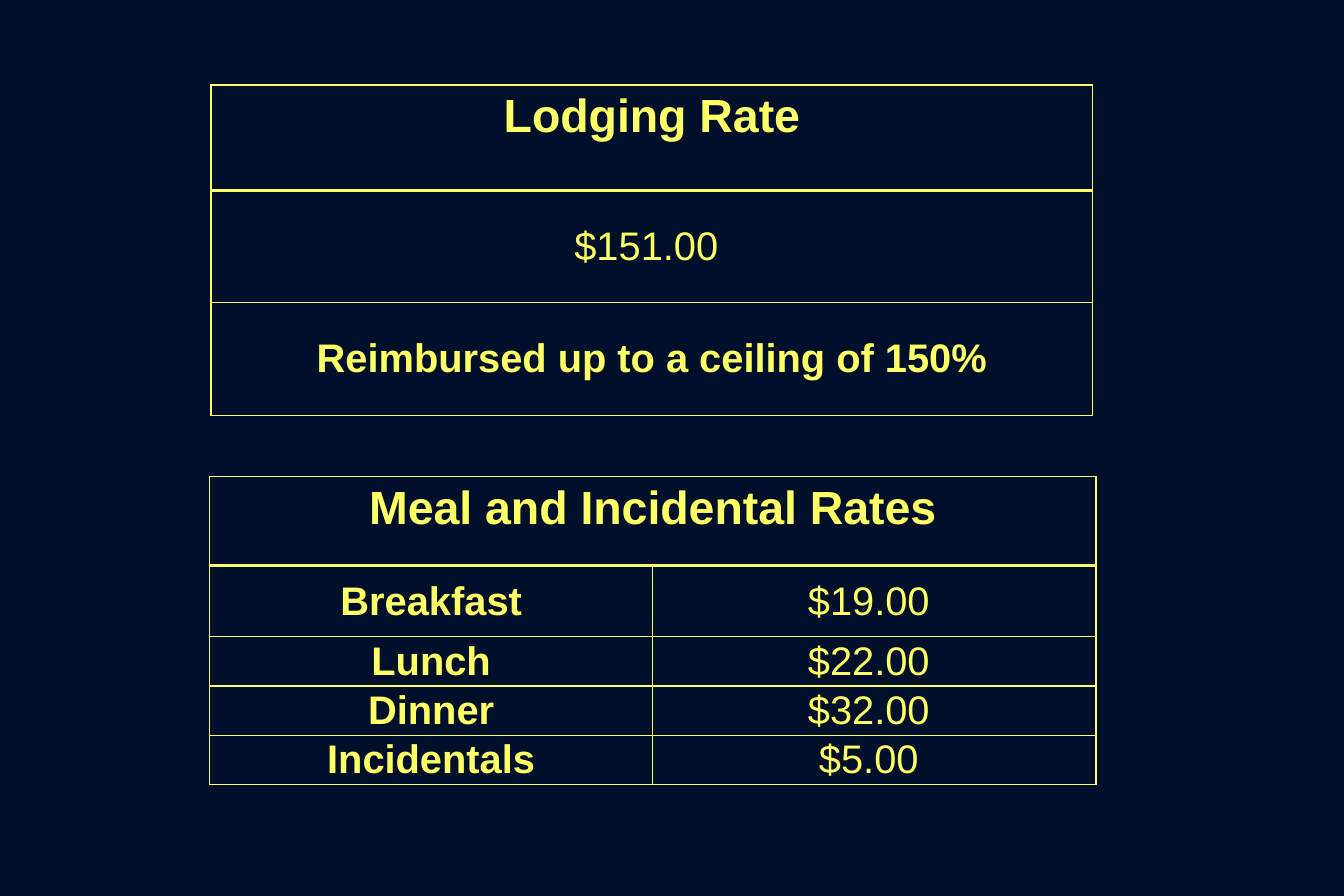
from lxml import etree
from pptx import Presentation
from pptx.dml.color import RGBColor
from pptx.enum.text import MSO_ANCHOR, PP_ALIGN
from pptx.oxml.ns import qn
from pptx.util import Pt

CENTER = PP_ALIGN.CENTER
TOP, MIDDLE = MSO_ANCHOR.TOP, MSO_ANCHOR.MIDDLE
NAVY, YELLOW = "000F2A", "FFFF66"

# Text formats
HEADING = {"size": Pt(28), "bold": True}
LABEL = {"size": Pt(24), "bold": True}
AMOUNT = {"size": Pt(24), "bold": False}

# Cell formats
HEADING_CELL = {"vertical_anchor": TOP}
BODY_CELL = {"vertical_anchor": MIDDLE, "margin_left": Pt(5), "margin_right": Pt(5),
             "margin_top": 0, "margin_bottom": 0}

MEALS = [("Breakfast", "$19.00 "), ("Lunch", "$22.00 "),
         ("Dinner", "$32.00 "), ("Incidentals", "$5.00 ")]


def rgb(value):
    return RGBColor.from_string(value)


def apply(target, values):
    for name, value in values.items():
        setattr(target, name, value)


def add_text(cell, text, style):
    p = cell.text_frame.paragraphs[0]
    p.alignment = CENTER
    r = p.add_run()
    r.text = text
    apply(r.font, {"name": "Arial", **style})
    r.font.color.rgb = rgb(YELLOW)


def add_borders(cell, color=YELLOW, width=Pt(1)):
    tc_pr = cell._tc.get_or_add_tcPr()
    for side in ("lnL", "lnR", "lnT", "lnB"):
        ln = etree.SubElement(tc_pr, qn(f"a:{side}"), w=str(int(width)))
        fill = etree.SubElement(ln, qn("a:solidFill"))
        etree.SubElement(fill, qn("a:srgbClr"), val=color)


def add_rate_table(s, left, top, width, heights, rows, cell_format):
    """Each cell is a pair: (text, style)."""
    columns = len(rows[0])
    table = s.shapes.add_table(len(rows), columns, Pt(left), Pt(top),
                               Pt(width), Pt(sum(heights))).table
    apply(table, {"first_row": False, "horz_banding": False})
    for column in table.columns:
        column.width = Pt(width / columns)
    for i, (height, row) in enumerate(zip(heights, rows)):
        table.rows[i].height = Pt(height)
        for j, (text, style) in enumerate(row):
            cell = table.cell(i, j)
            apply(cell, cell_format)
            add_borders(cell)
            cell.fill.background()
            add_text(cell, text, style)


def main():
    prs = Presentation()
    prs.slide_width, prs.slide_height = Pt(810), Pt(540)
    s = prs.slides.add_slide(prs.slide_layouts[6])
    s.background.fill.solid()
    s.background.fill.fore_color.rgb = rgb(NAVY)

    # Lodging
    add_rate_table(s, 127.2, 51.2, 531.4, [64], [[("Lodging Rate", HEADING)]],
                   HEADING_CELL)
    lodging = [[("$151.00 ", AMOUNT)],
               [("Reimbursed up to a ceiling of 150%", LABEL)]]
    add_rate_table(s, 127.2, 114.5, 531.4, [68, 68], lodging, BODY_CELL)

    # Meals and incidentals
    add_rate_table(s, 126.3, 287.3, 534.2, [53.3],
                   [[("Meal and Incidental Rates", HEADING)]], HEADING_CELL)
    meals = [[(meal, LABEL), (rate, AMOUNT)] for meal, rate in MEALS]
    add_rate_table(s, 126.3, 341.3, 534.2, [42.4] + [29.75] * 3, meals, BODY_CELL)

    prs.save("out.pptx")


if __name__ == "__main__":
    main()
